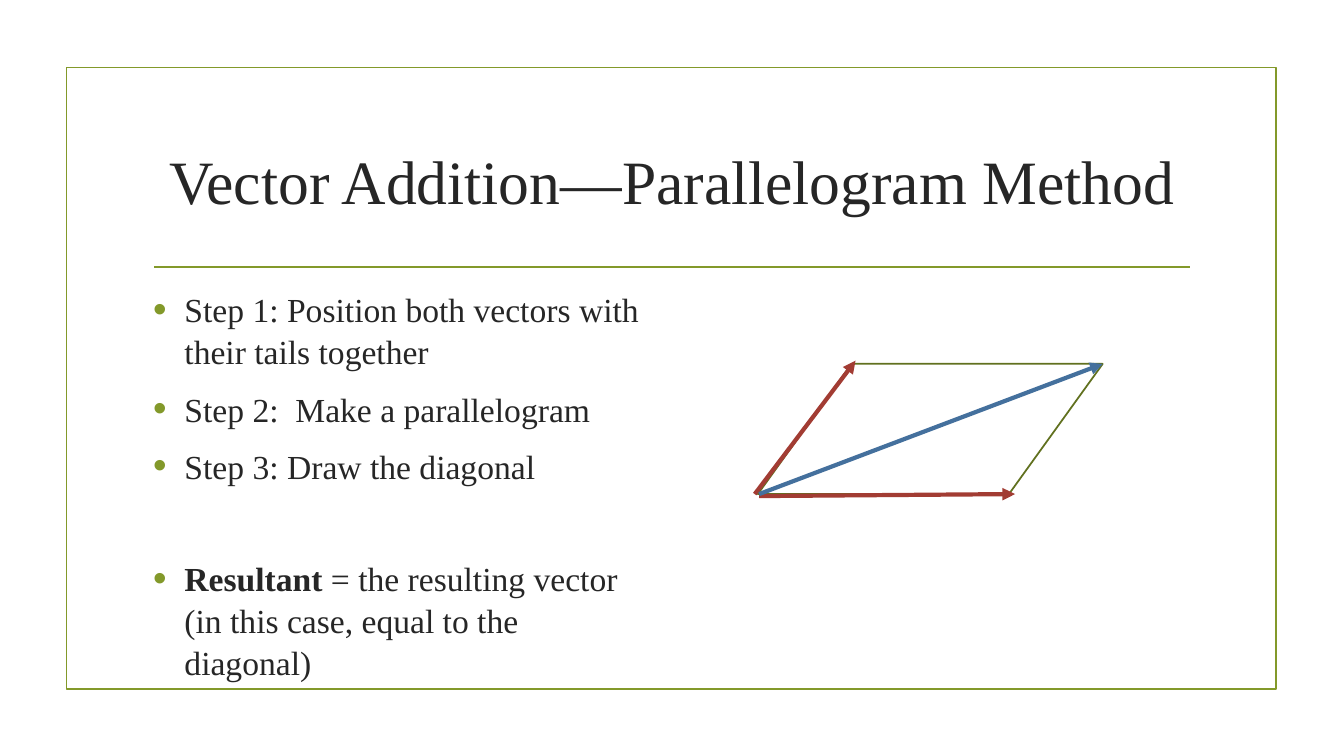
import pptx
import pptx.util
import pptx.dml.color
import pptx.enum.shapes
import pptx.enum.text
import pptx.oxml
import pptx.oxml.ns

Cm, Pt = pptx.util.Cm, pptx.util.Pt
RGBColor = pptx.dml.color.RGBColor
MSO_SHAPE = pptx.enum.shapes.MSO_SHAPE
NS = pptx.oxml.ns.nsdecls("a")

GREEN = RGBColor(0x83, 0x99, 0x2A)
DARK_GREEN = RGBColor(0x61, 0x71, 0x1F)
RED = RGBColor(0xA2, 0x3C, 0x33)
BLUE = RGBColor(0x44, 0x70, 0x9D)
INK = RGBColor(0x26, 0x26, 0x26)
FONT = "Times New Roman"

prs = pptx.Presentation()
prs.slide_width, prs.slide_height = Cm(33.87), Cm(19.05)
s = prs.slides.add_slide(prs.slide_layouts[6])


def add_outline(kind, left, top, width, height, color):
    sp = s.shapes.add_shape(kind, Cm(left), Cm(top), Cm(width), Cm(height))
    sp.shadow.inherit = False
    sp.fill.background()
    sp.line.color.rgb = color
    sp.line.width = Pt(1.25)
    return sp


def add_line(x1, y1, x2, y2, color, width):
    c = s.shapes.add_connector(pptx.enum.shapes.MSO_CONNECTOR.STRAIGHT,
                               Cm(x1), Cm(y1), Cm(x2), Cm(y2))
    c.line.color.rgb = color
    c.line.width = Pt(width)
    c._element.spPr.append(pptx.oxml.parse_xml(f"<a:effectLst {NS}/>"))
    return c


# Frame and rule under the title
add_outline(MSO_SHAPE.RECTANGLE, 1.68, 1.7, 30.48, 15.67, GREEN)
add_line(3.89, 6.73, 30, 6.73, GREEN, 1.25)

# Title
tf = s.shapes.add_textbox(Cm(3.61), Cm(2.72), Cm(26.67), Cm(3.63)).text_frame
tf.word_wrap = True
tf.vertical_anchor = pptx.enum.text.MSO_ANCHOR.MIDDLE
p = tf.paragraphs[0]
p.alignment = pptx.enum.text.PP_ALIGN.CENTER
r = p.add_run()
r.text = "Vector Addition—Parallelogram Method"
r.font.name, r.font.size, r.font.color.rgb = FONT, Pt(44), INK

# Steps: space before in points, then (text, bold) runs
steps = [
    (0, [("Step 1: Position both vectors with their tails together", False)]),
    (4.5, [("Step 2:  Make a parallelogram", False)]),
    (4.5, [("Step 3: Draw the diagonal", False)]),
    (44, [("Resultant", True),
          (" = the resulting vector (in this case, equal to the diagonal)", False)]),
]
tf = s.shapes.add_textbox(Cm(3.61), Cm(7.11), Cm(13.05), Cm(9.19)).text_frame
tf.word_wrap = True
for i, (space_before, runs) in enumerate(steps):
    p = tf.paragraphs[0] if i == 0 else tf.add_paragraph()
    p.line_spacing = 1.05
    p.space_before, p.space_after = Pt(space_before), Pt(6)
    pPr = p._p.get_or_add_pPr()
    pPr.set("marL", str(Cm(0.79)))
    pPr.set("indent", str(-Cm(0.79)))
    for bullet in (f'<a:buClr {NS}><a:srgbClr val="{GREEN}"/></a:buClr>',
                   f'<a:buSzPct {NS} val="115000"/>',
                   f'<a:buFont {NS} typeface="Arial"/>',
                   f'<a:buChar {NS} char="•"/>'):
        pPr.append(pptx.oxml.parse_xml(bullet))
    for text, bold in runs:
        r = p.add_run()
        r.text = text
        r.font.name, r.font.size, r.font.color.rgb = FONT, Pt(24), INK
        r.font.bold = bold

# Parallelogram
sp = add_outline(MSO_SHAPE.PARALLELOGRAM, 19.1, 9.17, 8.69, 3.28, DARK_GREEN)
sp.adjustments[0] = 0.72

# Two vectors and their resultant
vectors = [
    (19.02, 12.45, 21.56, 9.09, RED),
    (19.13, 12.5, 25.58, 12.45, RED),
    (19.13, 12.45, 27.79, 9.17, BLUE),
]
for x1, y1, x2, y2, color in vectors:
    c = add_line(x1, y1, x2, y2, color, 3)
    c.line._get_or_add_ln().append(
        pptx.oxml.parse_xml(f'<a:tailEnd {NS} type="triangle"/>'))

prs.save("out.pptx")
